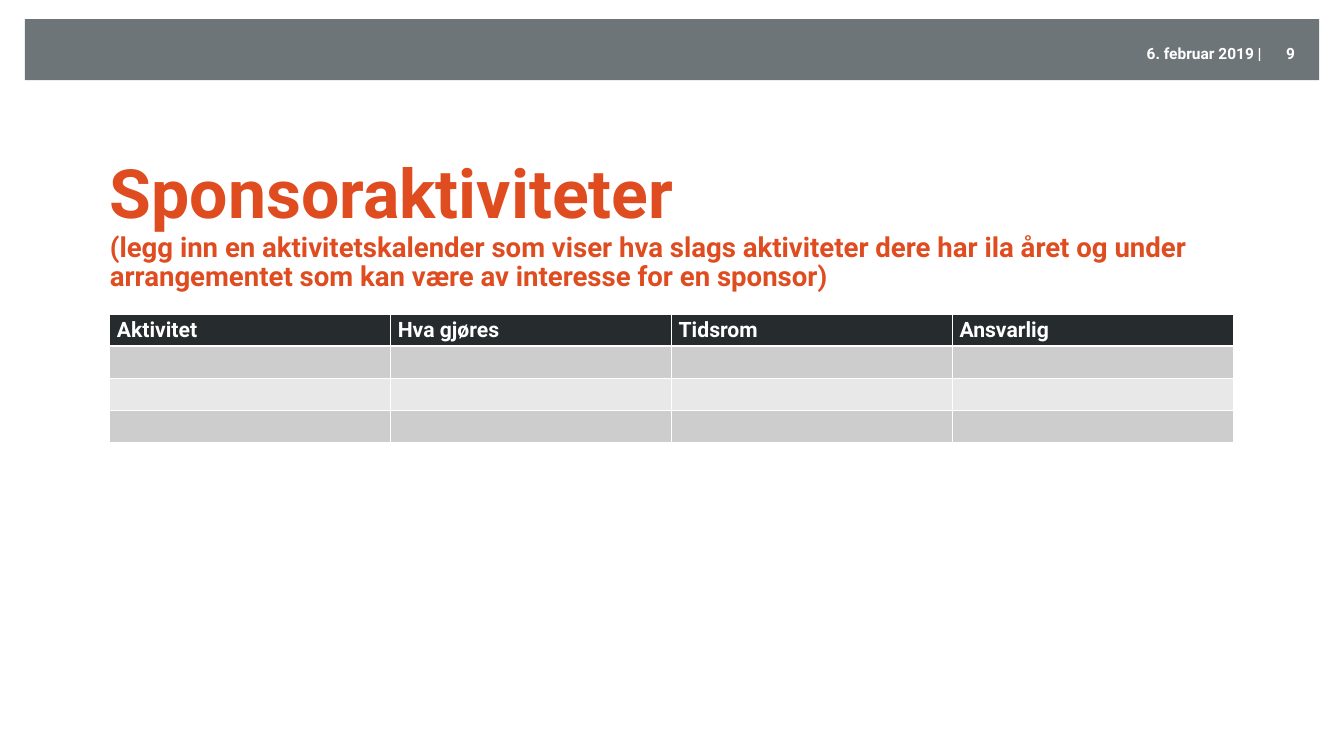
import pptx
import pptx.dml.color
import pptx.enum.shapes
import pptx.enum.text
import pptx.oxml
import pptx.oxml.ns
import pptx.util

Inches = pptx.util.Inches
Pt = pptx.util.Pt
RGBColor = pptx.dml.color.RGBColor
PP_ALIGN = pptx.enum.text.PP_ALIGN
MSO_ANCHOR = pptx.enum.text.MSO_ANCHOR
MSO_AUTO_SIZE = pptx.enum.text.MSO_AUTO_SIZE

WHITE = RGBColor(0xFF, 0xFF, 0xFF)
GREY = RGBColor(0x6D, 0x75, 0x79)
ORANGE = RGBColor(0xDF, 0x4C, 0x20)
DARK = RGBColor(0x26, 0x2C, 0x2E)
BAND = RGBColor(0xCD, 0xCD, 0xCD)
LIGHT_BAND = RGBColor(0xE8, 0xE8, 0xE8)


class SlideBuilder:
    """Hold the style and the current slide, and add each kind of element."""

    font = "Roboto"

    def __init__(self, prs):
        self.s = prs.slides.add_slide(prs.slide_layouts[5])

    def style(self, p, size, color):
        p.font.name = self.font
        p.font.size = Pt(size)
        p.font.bold = True
        p.font.color.rgb = color

    def frame(self, sp, anchor):
        tf = sp.text_frame
        tf.word_wrap = True
        tf.auto_size = MSO_AUTO_SIZE.NONE
        tf.vertical_anchor = anchor
        tf.margin_left = tf.margin_right = tf.margin_top = tf.margin_bottom = 0
        return tf

    def bar(self, left, top, width, height, color):
        sp = self.s.shapes.add_shape(
            pptx.enum.shapes.MSO_SHAPE.RECTANGLE,
            Inches(left), Inches(top), Inches(width), Inches(height))
        sp.shadow.inherit = False
        sp.fill.solid()
        sp.fill.fore_color.rgb = color
        sp.line.fill.background()

    def title(self, left, top, width, height, heading, subheading):
        sp = self.s.shapes.title
        sp.left, sp.top = Inches(left), Inches(top)
        sp.width, sp.height = Inches(width), Inches(height)
        p = self.frame(sp, MSO_ANCHOR.BOTTOM).paragraphs[0]
        p.alignment = PP_ALIGN.LEFT
        p.line_spacing = 0.9
        self.style(p, 69, ORANGE)
        p.add_run().text = heading
        p.add_line_break()
        r = p.add_run()
        r.text = subheading
        r.font.size = Pt(28)

    def label(self, left, top, width, height, text):
        sp = self.s.shapes.add_textbox(
            Inches(left), Inches(top), Inches(width), Inches(height))
        p = self.frame(sp, MSO_ANCHOR.MIDDLE).paragraphs[0]
        p.text = text
        p.alignment = PP_ALIGN.RIGHT
        self.style(p, 15.7, WHITE)

    def borders(self, cell, bottom):
        tc_pr = cell._tc.get_or_add_tcPr()
        for side, width in (("L", 1), ("R", 1), ("T", 1), ("B", bottom)):
            tc_pr.append(pptx.oxml.parse_xml(
                f'<a:ln{side} {pptx.oxml.ns.nsdecls("a")} w="{Pt(width)}">'
                f'<a:solidFill><a:srgbClr val="{WHITE}"/></a:solidFill>'
                f'</a:ln{side}>'))

    def table(self, left, top, width, row_height, headers, fills):
        table = self.s.shapes.add_table(
            len(fills), len(headers), Inches(left), Inches(top),
            Inches(width), Inches(row_height * len(fills))).table
        for i, fill in enumerate(fills):
            for j, header in enumerate(headers):
                cell = table.cell(i, j)
                self.borders(cell, 3 if i == 0 else 1)
                cell.fill.solid()
                cell.fill.fore_color.rgb = fill
                p = cell.text_frame.paragraphs[0]
                if i == 0:
                    p.text = header
                self.style(p, 21.5, WHITE)


def main():
    prs = pptx.Presentation()
    prs.slide_width, prs.slide_height = Inches(18.96), Inches(10.66)
    slide = SlideBuilder(prs)
    slide.bar(0.35, 0.27, 18.26, 0.86, GREY)
    slide.title(
        1.55, 2.04, 15.85, 2.09, "Sponsoraktiviteter",
        "(legg inn en aktivitetskalender som viser hva slags aktiviteter dere "
        "har ila året og under arrangementet som kan være av interesse for en "
        "sponsor)")
    slide.table(
        1.55, 4.43, 15.85, 0.44,
        ["Aktivitet", "Hva gjøres", "Tidsrom", "Ansvarlig"],
        [DARK, BAND, LIGHT_BAND, BAND])
    slide.label(12.67, 0.62, 5.13, 0.26, "6. februar 2019 |")
    slide.label(17.8, 0.62, 0.47, 0.26, "9")
    prs.save("out.pptx")


if __name__ == "__main__":
    main()
